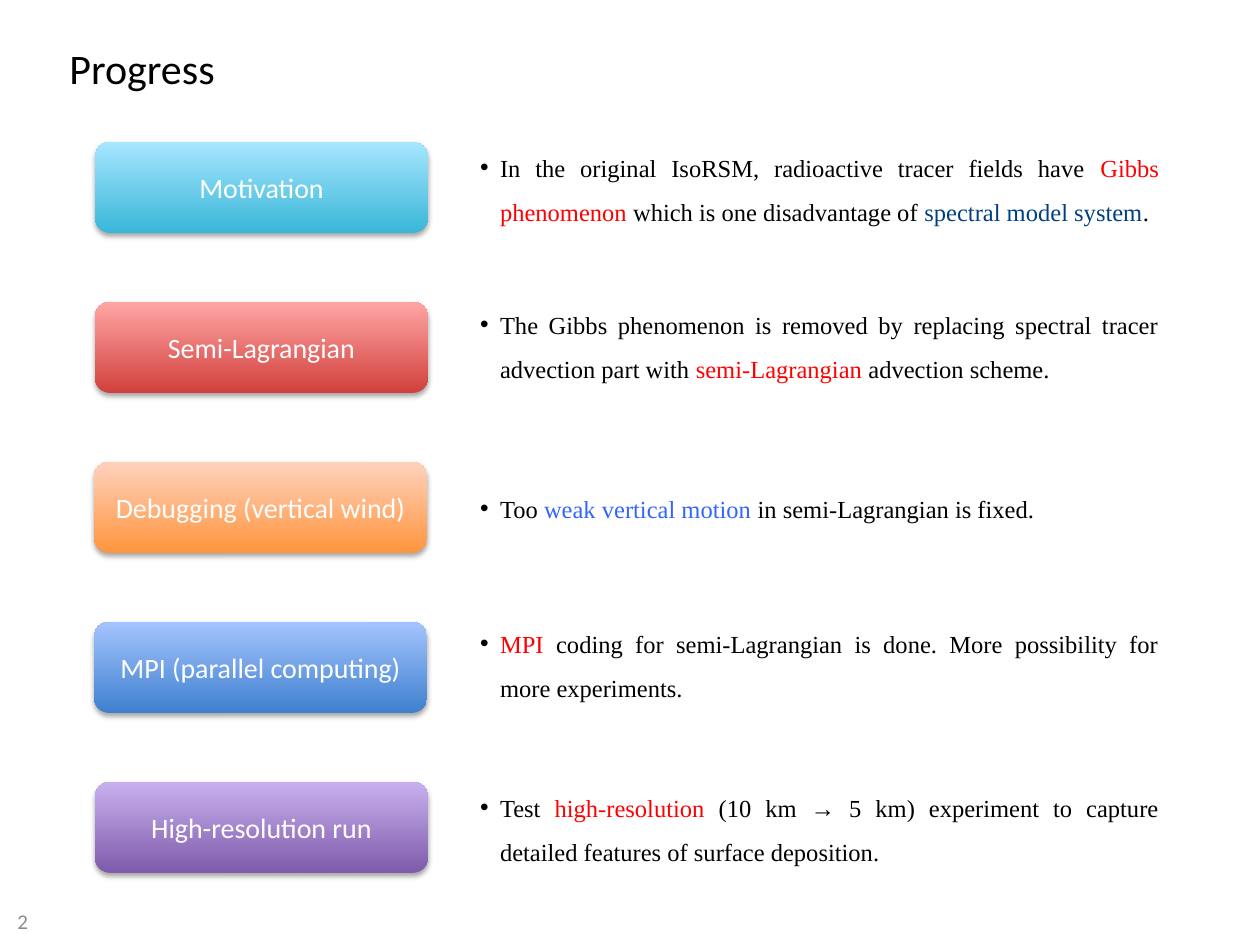
import pptx
import pptx.util
import pptx.dml.color
import pptx.enum.shapes
import pptx.enum.text
import pptx.oxml
import pptx.oxml.ns

PX = 914400 / 126
BLACK, RED, NAVY, BLUE = "000000", "FF0000", "004080", "3366FF"
ALIGN = pptx.enum.text.PP_ALIGN
MIDDLE = pptx.enum.text.MSO_ANCHOR.MIDDLE

# label, box left, dark and light colour, note top and height, note runs
STEPS = [
    ("Motivation", 95, "39B7D8", "A7E6FF", 134, 116, [
        ("In the original IsoRSM, radioactive tracer fields have ", BLACK),
        ("Gibbs phenomenon ", RED),
        ("which is one disadvantage of ", BLACK),
        ("spectral model system", NAVY),
        (".", BLACK)]),
    ("Semi-Lagrangian", 95, "D1403C", "FFA6A5", 291, 116, [
        ("The Gibbs phenomenon is removed by replacing spectral tracer "
         "advection part with ", BLACK),
        ("semi-Lagrangian ", RED),
        ("advection scheme.", BLACK)]),
    ("Debugging (vertical wind)", 94, "FF953E", "FFD2BD", 475, 72, [
        ("Too ", BLACK),
        ("weak vertical motion ", BLUE),
        ("in semi-Lagrangian is fixed.", BLACK)]),
    ("MPI (parallel computing)", 94, "3F80CE", "A4C4FF", 610, 116, [
        ("MPI ", RED),
        ("coding for semi-Lagrangian is done. More possibility for more "
         "experiments.", BLACK)]),
    ("High-resolution run", 95, "7F5BAB", "C8B0ED", 774, 116, [
        ("Test ", BLACK),
        ("high-resolution ", RED),
        ("(10 km → 5 km) experiment to capture detailed features of "
         "surface deposition.", BLACK)]),
]
BOX_TOP, BOX_STEP, BOX_W, BOX_H = 142, 160, 333, 91
NOTE_X, NOTE_W, NOTE_INSET, NOTE_INDENT = 476, 687, 4, 20


def px(n):
    return round(n * PX)


def rgb(color):
    return pptx.dml.color.RGBColor.from_string(color)


def xml(tag, attrs="", inner=""):
    ns = pptx.oxml.ns.nsdecls("a")
    return pptx.oxml.parse_xml(f"<a:{tag} {ns} {attrs}>{inner}</a:{tag}>")


def style(r, size, color, name="Calibri"):
    r.font.size = pptx.util.Pt(size)
    r.font.name = name
    r.font.color.rgb = rgb(color)


def add_text(s, x, y, w, h):
    sp = s.shapes.add_textbox(px(x), px(y), px(w), px(h))
    sp.text_frame.word_wrap = True
    return sp.text_frame


def add_label(s, text, x, y, w, h, size, color):
    tf = add_text(s, x, y, w, h)
    tf.vertical_anchor = MIDDLE
    tf.text = text
    style(tf.paragraphs[0].runs[0], size, color)


def add_box(s, text, x, y, dark, light):
    sp = s.shapes.add_shape(pptx.enum.shapes.MSO_SHAPE.ROUNDED_RECTANGLE,
                            px(x), px(y), px(BOX_W), px(BOX_H))
    sp.fill.gradient()
    sp.fill.gradient_angle = 90
    for stop, color in zip(sp.fill.gradient_stops, (dark, light)):
        stop.color.rgb = rgb(color)
    sp.line.fill.background()
    # soft shadow straight below
    sp.shadow.inherit = False
    effects = sp._element.spPr.find(pptx.oxml.ns.qn("a:effectLst"))
    effects.append(xml(
        "outerShdw",
        'blurRad="40000" dist="23000" dir="5400000" rotWithShape="0"',
        '<a:srgbClr val="000000"><a:alpha val="35000"/></a:srgbClr>'))
    tf = sp.text_frame
    tf.word_wrap = True
    tf.vertical_anchor = MIDDLE
    tf.text = text
    p = tf.paragraphs[0]
    p.alignment = ALIGN.CENTER
    style(p.runs[0], 16, "FFFFFF")


def add_note(s, y, h, runs):
    tf = add_text(s, NOTE_X, y, NOTE_W, h)
    tf.margin_left = tf.margin_right = px(NOTE_INSET)
    tf.margin_top = tf.margin_bottom = px(NOTE_INSET)
    p = tf.paragraphs[0]
    pPr = p._p.get_or_add_pPr()
    pPr.set("marL", str(px(NOTE_INDENT)))
    pPr.set("indent", str(-px(NOTE_INDENT)))
    pPr.append(xml("buClr", inner=f'<a:srgbClr val="{BLACK}"/>'))
    pPr.append(xml("buFont", 'typeface="Arial"'))
    pPr.append(xml("buChar", 'char="•"'))
    p.alignment = ALIGN.JUSTIFY
    p.line_spacing = 1.5
    for text, color in runs:
        r = p.add_run()
        r.text = text
        style(r, 14, color, "Times New Roman")


prs = pptx.Presentation()
prs.slide_width, prs.slide_height = px(1260), px(945)
s = prs.slides.add_slide(prs.slide_layouts[6])

# Title and page number
add_label(s, "Progress", 57, 24, 485, 88, 24, BLACK)
add_label(s, "2", 5, 903, 52, 37, 12, "8C8C8C")

# Steps with their notes
for i, (label, x, dark, light, note_y, note_h, runs) in enumerate(STEPS):
    add_box(s, label, x, BOX_TOP + i * BOX_STEP, dark, light)
    add_note(s, note_y, note_h, runs)

prs.save("out.pptx")
